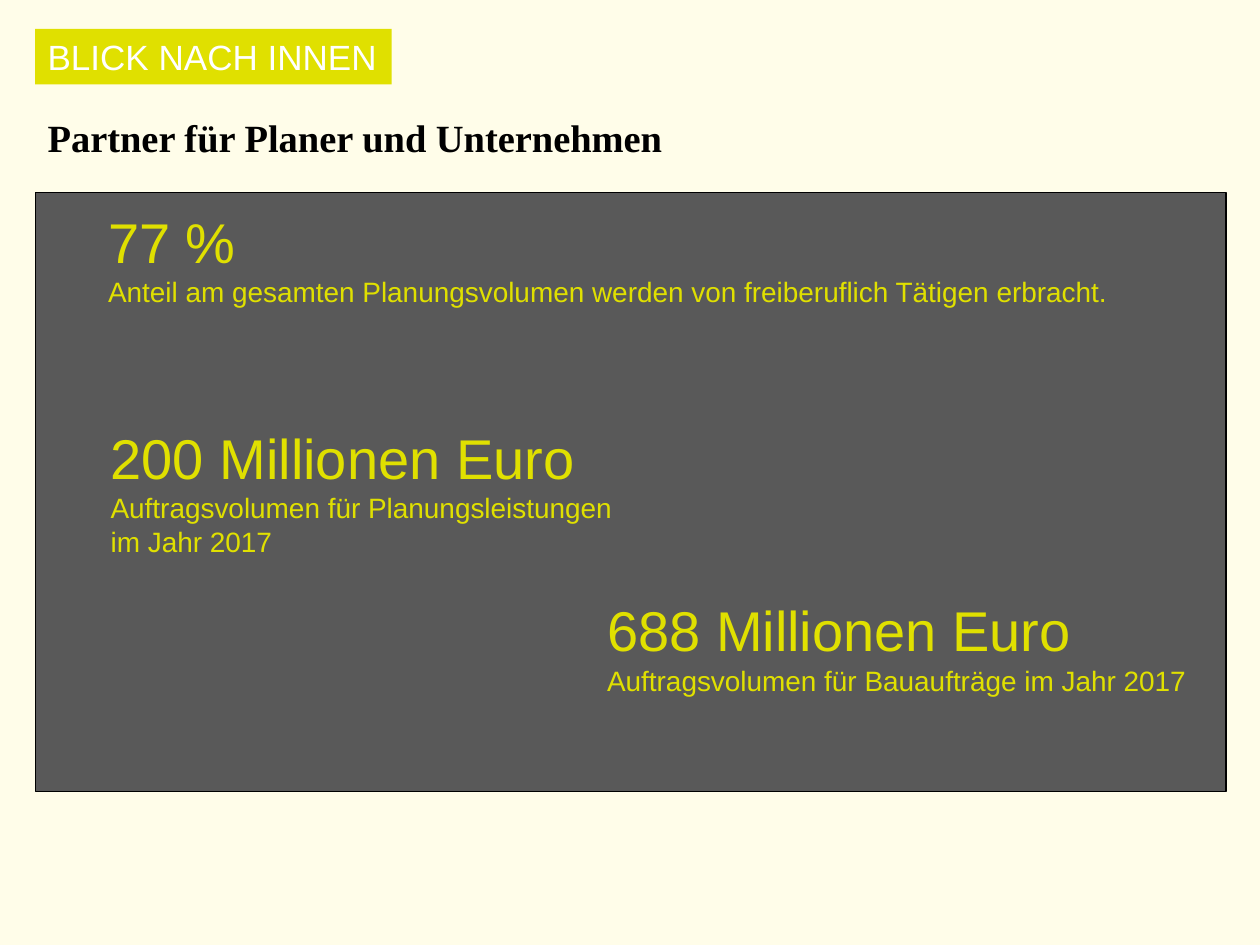
import dataclasses

import pptx
import pptx.dml.color
import pptx.enum.shapes
import pptx.enum.text
import pptx.util

Inches = pptx.util.Inches


@dataclasses.dataclass(frozen=True)
class Theme:
    background: str = "FFFDE9"
    panel: str = "595959"
    accent: str = "E0E000"
    white: str = "FFFFFF"
    black: str = "000000"
    sans: str = "Arial"
    serif: str = "Times New Roman"
    badge_size: int = 20
    heading_size: int = 22
    figure_size: int = 32
    caption_size: int = 16
    outline_width: float = 0.75


def rgb(value):
    return pptx.dml.color.RGBColor.from_string(value)


def write(paragraph, text, *, size, font, color, bold=False):
    run = paragraph.add_run()
    run.text = text
    run.font.size = pptx.util.Pt(size)
    run.font.name = font
    run.font.bold = bold
    run.font.color.rgb = rgb(color)


class SlideBuilder:
    def __init__(self, slide, theme):
        self.slide = slide
        self.theme = theme
        slide.background.fill.solid()
        slide.background.fill.fore_color.rgb = rgb(theme.background)

    def rectangle(self, left, top, width, height, fill, outline=None):
        rectangle = self.slide.shapes.add_shape(
            pptx.enum.shapes.MSO_SHAPE.RECTANGLE,
            Inches(left), Inches(top), Inches(width), Inches(height))
        rectangle.shadow.inherit = False
        rectangle.fill.solid()
        rectangle.fill.fore_color.rgb = rgb(fill)
        if outline:
            rectangle.line.color.rgb = rgb(outline)
            rectangle.line.width = pptx.util.Pt(self.theme.outline_width)
        else:
            rectangle.line.fill.background()
        return rectangle

    def first_paragraph(self, holder):
        frame = holder.text_frame
        frame.word_wrap = True
        frame.auto_size = pptx.enum.text.MSO_AUTO_SIZE.SHAPE_TO_FIT_TEXT
        frame.vertical_anchor = pptx.enum.text.MSO_ANCHOR.TOP
        paragraph = frame.paragraphs[0]
        paragraph.alignment = pptx.enum.text.PP_ALIGN.LEFT
        return paragraph

    def text_box(self, left, top, width, height):
        return self.first_paragraph(self.slide.shapes.add_textbox(
            Inches(left), Inches(top), Inches(width), Inches(height)))

    def badge(self, text, left, top, width, height):
        badge = self.rectangle(left, top, width, height, self.theme.accent)
        write(self.first_paragraph(badge), text, size=self.theme.badge_size,
              font=self.theme.sans, color=self.theme.white)

    def heading(self, text, left, top, width, height):
        write(self.text_box(left, top, width, height), text,
              size=self.theme.heading_size, font=self.theme.serif,
              color=self.theme.black, bold=True)

    def key_figure(self, figure, caption, left, top, width, height):
        paragraph = self.text_box(left, top, width, height)
        write(paragraph, figure, size=self.theme.figure_size,
              font=self.theme.sans, color=self.theme.accent)
        paragraph.add_line_break()
        write(paragraph, caption, size=self.theme.caption_size,
              font=self.theme.sans, color=self.theme.accent)


KEY_FIGURES = [
    ("77 %",
     "Anteil am gesamten Planungsvolumen werden von freiberuflich Tätigen erbracht.",
     0.76, 1.6, 8.17, 0.91),
    ("200 Millionen Euro",
     "Auftragsvolumen für Planungsleistungen im Jahr 2017",
     0.78, 3.31, 4.4, 1.18),
    ("688 Millionen Euro",
     "Auftragsvolumen für Bauaufträge im Jahr 2017",
     4.72, 4.68, 4.96, 0.91),
]


def main():
    presentation = pptx.Presentation()
    presentation.slide_width = Inches(10)
    presentation.slide_height = Inches(7.5)
    theme = Theme()
    builder = SlideBuilder(
        presentation.slides.add_slide(presentation.slide_layouts[6]), theme)

    margin = 0.28
    builder.rectangle(margin, 1.53, 9.45, 4.75, theme.panel, theme.black)
    builder.badge("BLICK NACH INNEN", margin, 0.23, 2.83, 0.44)
    for key_figure in KEY_FIGURES:
        builder.key_figure(*key_figure)
    builder.heading("Partner für Planer und Unternehmen", margin, 0.86, 8.9, 0.47)

    presentation.save("out.pptx")


if __name__ == "__main__":
    main()
